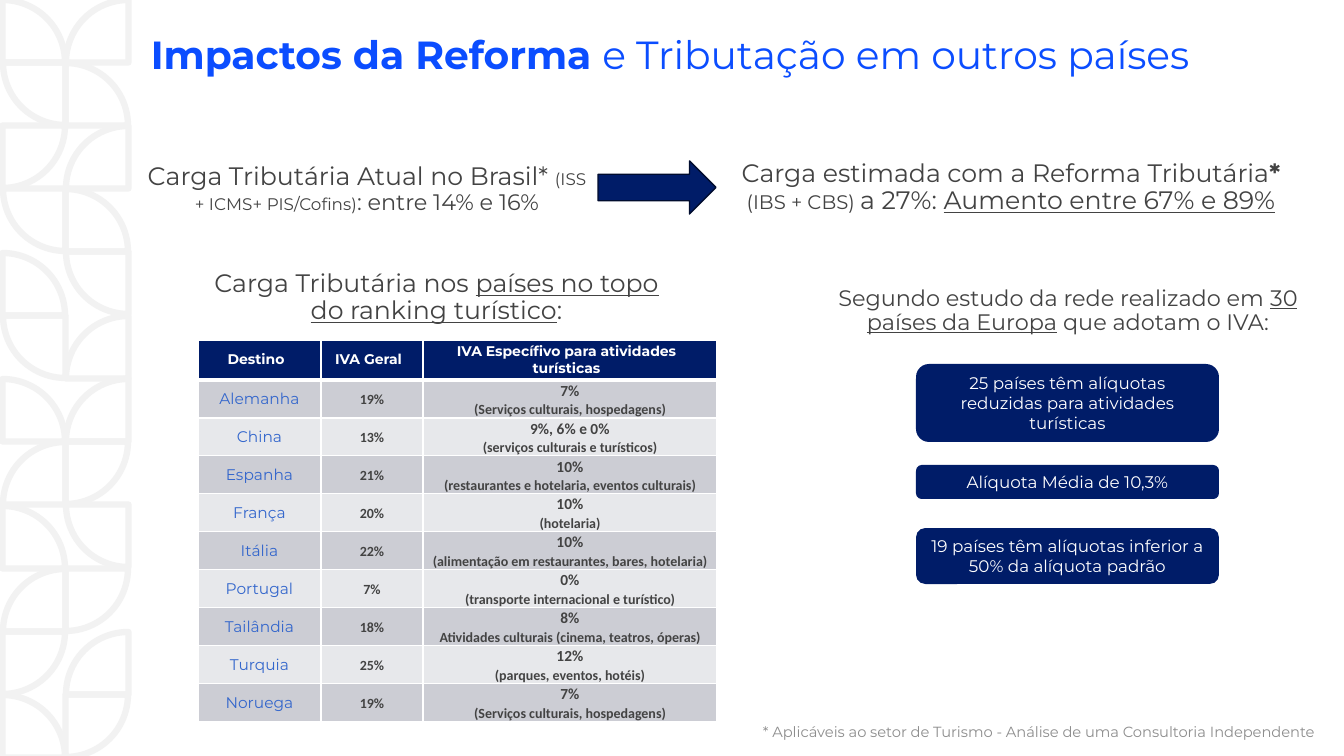
"""Builds the slide on the tax reform's impact and tourism taxes in other countries."""
from lxml import etree
from pptx import Presentation
from pptx.dml.color import RGBColor
from pptx.enum.shapes import MSO_SHAPE
from pptx.enum.text import MSO_ANCHOR, MSO_AUTO_SIZE, PP_ALIGN
from pptx.oxml.ns import qn
from pptx.util import Emu, Pt

LEFT, CENTER = PP_ALIGN.LEFT, PP_ALIGN.CENTER
TOP, MIDDLE = MSO_ANCHOR.TOP, MSO_ANCHOR.MIDDLE
PX = 914400 / 100.8
SANS, BODY = "Montserrat", "Calibri"
COLORS = {
    "title": "0B4DFF", "text": "434343", "note": "8E8E8E", "navy": "001C68",
    "arrow_line": "000C2E", "white": "FFFFFF", "country": "3366CC",
    "dark_band": "CCCDD4", "light_band": "E7E8EB", "pattern": "F2F2F2",
}

# Each text: place, anchor, alignment, colour, runs of (text, size, style)
TEXTS = [
    ((141, 23, 1203, 67), MIDDLE, LEFT, "title",
     [("Impactos da Reforma ", 28, "b"), ("e Tributação em outros países", 28, "")]),
    ((136, 159, 462, 87), TOP, CENTER, "text",
     [("Carga Tributária Atual no Brasil* ", 18, ""),
      ("(ISS + ICMS+ PIS/Cofins)", 12, ""), (": entre 14% e 16%", 16, "")]),
    ((753, 720, 590, 25), TOP, LEFT, "note",
     [("* Aplicáveis ao setor de Turismo - Análise de uma Consultoria Independente", 10.5, "")]),
    ((198, 266, 477, 67), TOP, CENTER, "text",
     [("Carga Tributária nos ", 18, ""),
      ("países no topo do ranking turístico", 18, "u"), (":", 18, "")]),
    ((709, 156, 604, 66), TOP, CENTER, "text",
     [("Carga estimada com a Reforma Tributária", 18, ""), ("* ", 18, "b"),
      ("(IBS + CBS) ", 14, ""), ("a 27%: ", 18, ""), ("Aumento entre 67% e 89%", 18, "u")]),
    ((820, 282, 496, 67), TOP, CENTER, "text",
     [("Segundo estudo da rede realizado em ", 16, ""),
      ("30 países da Europa", 16, "u"), (" que adotam o IVA:", 16, "")]),
]
PILLS = [
    (364, 78, "25 países têm alíquotas reduzidas para atividades turísticas"),
    (465, 34, "Alíquota Média de 10,3%"),
    (528, 56, "19 países têm alíquotas inferior a 50% da alíquota padrão"),
]
HEADERS = ["Destino", "IVA Geral", "IVA Específivo para atividades turísticas"]
COUNTRIES = [
    ("Alemanha", "19%", "7%", "(Serviços culturais, hospedagens)"),
    ("China", "13%", "9%, 6% e 0%", "(serviços culturais e turísticos)"),
    ("Espanha", "21%", "10%", "(restaurantes e hotelaria, eventos culturais)"),
    ("França", "20%", "10%", "(hotelaria)"),
    ("Itália", "22%", "10%", "(alimentação em restaurantes, bares, hotelaria)"),
    ("Portugal", "7%", "0%", "(transporte internacional e turístico)"),
    ("Tailândia", "18%", "8%", "Atividades culturais (cinema, teatros, óperas)"),
    ("Turquia", "25%", "12%", "(parques, eventos, hotéis)"),
    ("Noruega", "19%", "7%", "(Serviços culturais, hospedagens)"),
]
COLUMN_WIDTHS = [123, 102, 294]
HEADER_HEIGHT, ROW_HEIGHT = 40, 38
# Quarter circles: column, row, rotation
QUARTERS = [
    (1, 0, 270), (2, 0, 0), (1, 1, 90), (0, 1, 180), (2, 2, 0), (1, 3, 90),
    (1, 2, 270), (2, 3, 270), (0, 4, 90), (1, 4, 270), (0, 0, 90), (2, 5, 0),
    (1, 6, 180), (0, 6, 90), (1, 7, 0), (2, 7, 270), (0, 8, 90), (1, 9, 0),
    (1, 8, 180), (0, 9, 180), (2, 10, 0), (1, 10, 180), (2, 6, 0), (0, 11, 90),
]
TILE, PIE_SIZE = 63, 125


def px(length):
    return Emu(round(length * PX))


def color(name):
    return RGBColor.from_string(COLORS[name])


def add_preset(page, preset, place, fill=None, line=None, width=1):
    shape = page.shapes.add_shape(preset, *map(px, place))
    shape.shadow.inherit = False
    if fill:
        shape.fill.solid()
        shape.fill.fore_color.rgb = color(fill)
    else:
        shape.fill.background()
    if line:
        shape.line.color.rgb = color(line)
        shape.line.width = Pt(width)
    else:
        shape.line.fill.background()
    return shape


def style(para, name, size, tint, bold=False, spacing=None):
    para.alignment = CENTER
    para.line_spacing = spacing
    para.font.name = name
    para.font.size = Pt(size)
    para.font.bold = bold
    para.font.color.rgb = color(tint)


def add_text(page, place, anchor, alignment, tint, runs):
    frame = page.shapes.add_textbox(*map(px, place)).text_frame
    frame.word_wrap = True
    frame.vertical_anchor = anchor
    para = frame.paragraphs[0]
    para.alignment = alignment
    para.line_spacing = 0.9
    para.font.name = SANS
    para.font.color.rgb = color(tint)
    for text, size, look in runs:
        span = para.add_run()
        span.text = text
        span.font.name = SANS
        span.font.color.rgb = color(tint)
        span.font.size = Pt(size)
        span.font.bold = look == "b"
        span.font.underline = look == "u"


def fill_cell(cell, lines, fill, margins, bottom=1):
    properties = cell._tc.get_or_add_tcPr()
    for side, width in (("lnL", 1), ("lnR", 1), ("lnT", 1), ("lnB", bottom)):
        border = etree.SubElement(properties, qn(f"a:{side}"), w=str(Pt(width)))
        solid = etree.SubElement(border, qn("a:solidFill"))
        etree.SubElement(solid, qn("a:srgbClr"), val=COLORS["white"])
    cell.fill.solid()
    cell.fill.fore_color.rgb = color(fill)
    cell.vertical_anchor = MIDDLE
    cell.margin_left, cell.margin_right, cell.margin_top, cell.margin_bottom = map(px, margins)
    frame = cell.text_frame
    frame.text = "\n".join(line[0] for line in lines)
    for para, line in zip(frame.paragraphs, lines):
        style(para, *line[1:])


def add_rates(page):
    height = HEADER_HEIGHT + ROW_HEIGHT * len(COUNTRIES)
    place = (198, 340, sum(COLUMN_WIDTHS), height)
    table = page.shapes.add_table(len(COUNTRIES) + 1, len(HEADERS), *map(px, place)).table
    for column, width in zip(table.columns, COLUMN_WIDTHS):
        column.width = px(width)
    for index, row in enumerate(table.rows):
        row.height = px(ROW_HEIGHT if index else HEADER_HEIGHT)
    for index, header in enumerate(HEADERS):
        fill_cell(table.cell(0, index), [(header, SANS, 10, "white", True)],
                  "navy", (7, 14, 3, 3), 3)
    for index, (country, general, rate, scope) in enumerate(COUNTRIES, 1):
        band = "dark_band" if index % 2 else "light_band"
        fill_cell(table.cell(index, 0), [(country, SANS, 11, "country")], band, (7, 7, 3, 3))
        general_cell = table.cell(index, 1)
        fill_cell(general_cell, [(general, BODY, 10, "text", True, 1.07)], band, (7, 7, 0, 0))
        general_cell.text_frame.paragraphs[0].space_after = Pt(2.4)
        fill_cell(table.cell(index, 2), [(rate, BODY, 11, "text", True, 1.07),
                                         (scope, BODY, 10, "text", True, 1.07)],
                  band, (7, 7, 0, 0))


def main():
    deck = Presentation()
    deck.slide_width, deck.slide_height = px(1344), px(756)
    page = deck.slides.add_slide(deck.slide_layouts[6])
    for column, row, rotation in QUARTERS:
        place = (3 + TILE * (column - 1), TILE * row + row // 4, PIE_SIZE, PIE_SIZE)
        quarter = add_preset(page, MSO_SHAPE.PIE, place, line="pattern", width=4.5)
        quarter.adjustments[0], quarter.adjustments[1] = 108, 162
        quarter.rotation = rotation
    for text in TEXTS:
        add_text(page, *text)
    add_rates(page)
    add_preset(page, MSO_SHAPE.RIGHT_ARROW, (598, 161, 118, 53), "navy", "arrow_line")
    for top, height, text in PILLS:
        pill = add_preset(page, MSO_SHAPE.ROUNDED_RECTANGLE, (916, top, 303, height), "navy")
        frame = pill.text_frame
        frame.word_wrap = True
        frame.auto_size = MSO_AUTO_SIZE.SHAPE_TO_FIT_TEXT
        frame.vertical_anchor = TOP
        frame.text = text
        style(frame.paragraphs[0], SANS, 12, "white")
    deck.save("out.pptx")


if __name__ == "__main__":
    main()
